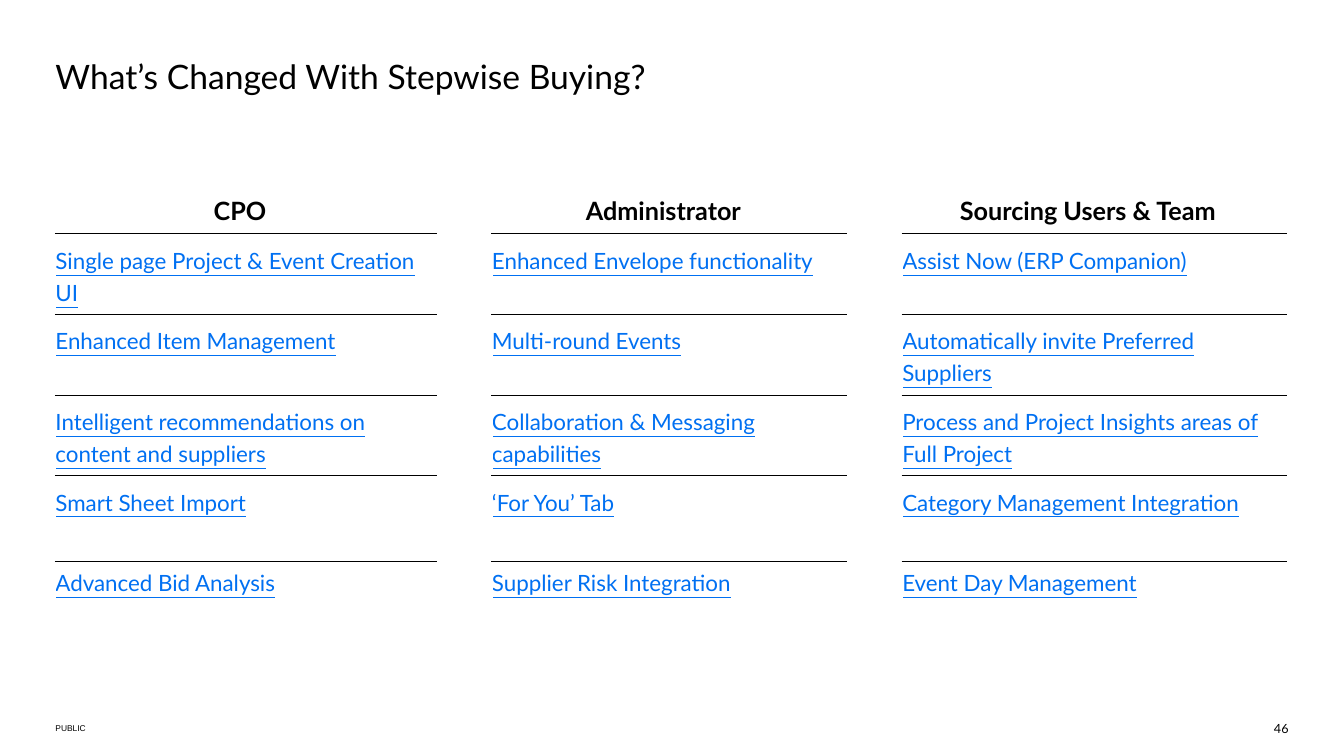
from pptx import Presentation
from pptx.dml.color import RGBColor
from pptx.enum.text import MSO_ANCHOR as Anchor, PP_ALIGN as Align
from pptx.oxml import parse_xml
from pptx.oxml.ns import nsdecls
from pptx.util import Inches, Pt

BLACK, LINK_BLUE = "000000", "0070F2"


def add_span(frame, text, size, color=BLACK, font="Lato", align=Align.LEFT):
    para = frame.paragraphs[0]
    para.alignment = align
    span = para.add_run()
    span.text = text
    span.font.name = font
    span.font.size = Pt(size)
    span.font.color.rgb = RGBColor.from_string(color)
    return span


def add_rule(cell, side, position):
    """Draw a thin black border on one side of a table cell."""
    cell._tc.get_or_add_tcPr().insert(position, parse_xml(
        f'<a:{side} {nsdecls("a")} w="9525"><a:solidFill>'
        f'<a:srgbClr val="{BLACK}"/></a:solidFill></a:{side}>'))


deck = Presentation()
deck.slide_width, deck.slide_height = Inches(13.33), Inches(7.5)
page = deck.slides.add_slide(deck.slide_layouts[6])

# Title, footer and page number
texts = [
    ("What’s Changed With Stepwise Buying?", 0.55, 0.55, 12.23, 0.4, 24, "Lato", Align.LEFT),
    ("PUBLIC", 0.55, 7.15, 11.1, 0.15, 6, "Arial", Align.LEFT),
    ("46", 12.28, 7.15, 0.5, 0.15, 9, "Lato", Align.RIGHT),
]
for text, left, top, width, height, size, font, align in texts:
    box = page.shapes.add_textbox(Inches(left), Inches(top), Inches(width), Inches(height))
    frame = box.text_frame
    frame.word_wrap = True
    frame.margin_left = frame.margin_right = frame.margin_top = frame.margin_bottom = 0
    if text == "PUBLIC":
        frame.vertical_anchor = Anchor.MIDDLE
    add_span(frame, text, size, font=font, align=align)

# Topics per role, with a blank column between roles
topics = [
    ["CPO", "Administrator", "Sourcing Users & Team"],
    ["Single page Project & Event Creation UI", "Enhanced Envelope functionality",
     "Assist Now (ERP Companion)"],
    ["Enhanced Item Management", "Multi-round Events",
     "Automatically invite Preferred Suppliers"],
    ["Intelligent recommendations on content and suppliers",
     "Collaboration & Messaging capabilities",
     "Process and Project Insights areas of Full Project"],
    ["Smart Sheet Import", "‘For You’ Tab", "Category Management Integration"],
    ["Advanced Bid Analysis", "Supplier Risk Integration", "Event Day Management"],
]
column_widths = [3.79, 0.54, 3.53, 0.54, 3.81]
row_heights = [0.46, 0.77, 0.77, 0.77, 0.85, 0.72]
last_row = len(topics) - 1

table = page.shapes.add_table(len(row_heights), len(column_widths), Inches(0.55),
                              Inches(1.86), Inches(12.23), Inches(4.33)).table
table.first_row = table.horz_banding = False
for column, width in zip(table.columns, column_widths):
    column.width = Inches(width)
for row, height in zip(table.rows, row_heights):
    row.height = Inches(height)
for cell in table.iter_cells():
    cell.fill.background()

for row_index, row_topics in enumerate(topics):
    for role_index, topic in enumerate(row_topics):
        cell = table.cell(row_index, 2 * role_index)
        cell.margin_left, cell.margin_right = 0, Inches(0.13)
        cell.margin_top = cell.margin_bottom = Inches(0.08)
        if row_index < last_row:
            add_rule(cell, "lnB", 0)
        if row_index > 0:
            add_rule(cell, "lnT", 0)
        if row_index == 0:
            add_span(cell.text_frame, topic, 18, align=Align.CENTER).font.bold = True
        else:
            add_span(cell.text_frame, topic, 16, LINK_BLUE).font.underline = True
            if row_index < last_row:
                cell.text_frame.paragraphs[0].line_spacing = 1.2

deck.save("out.pptx")
